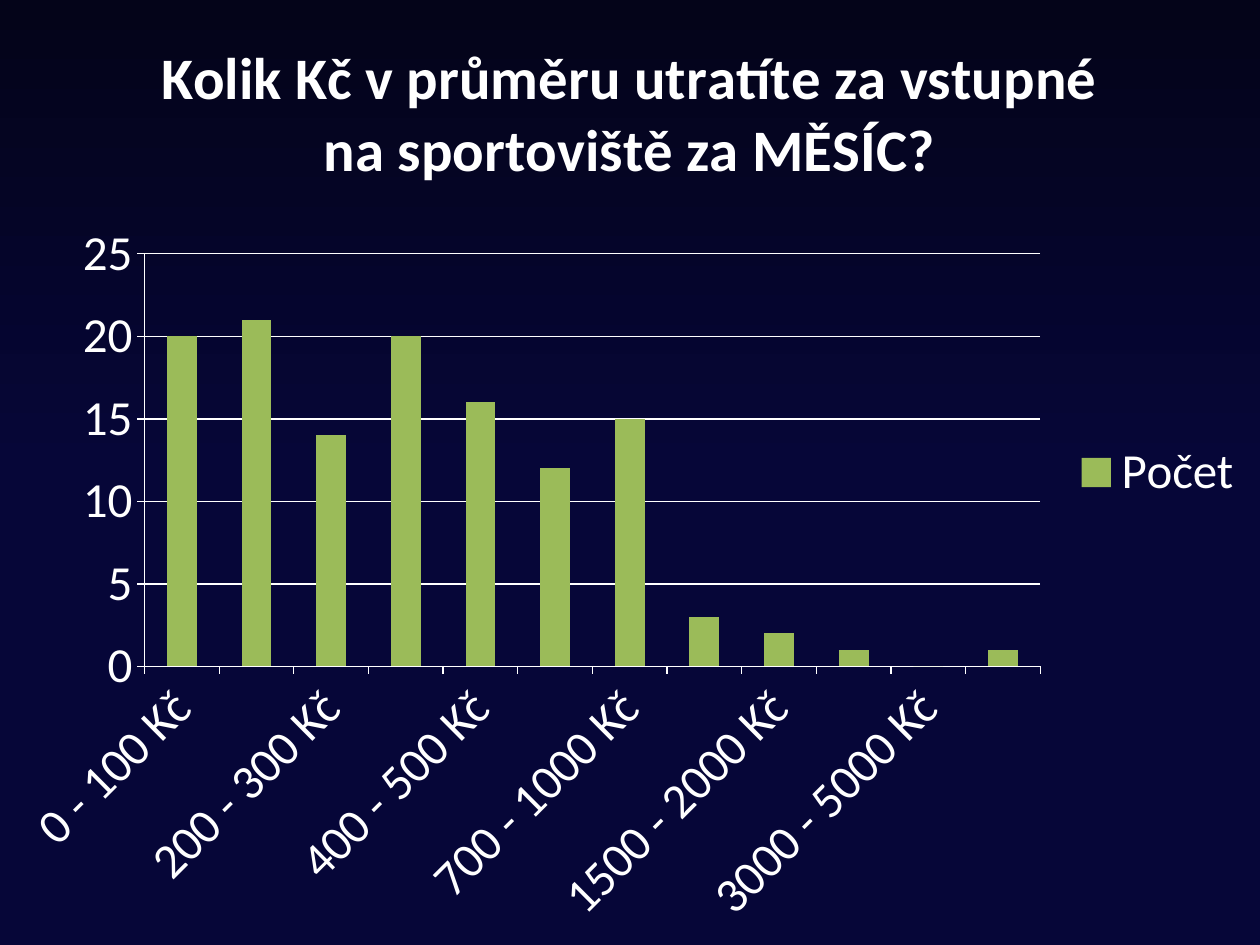
from pptx import Presentation
from pptx.chart.data import CategoryChartData
from pptx.dml.color import RGBColor
from pptx.enum.chart import XL_CHART_TYPE, XL_LEGEND_POSITION, XL_TICK_MARK
from pptx.util import Inches, Pt

COLORS = {"top": "040419", "base": "060638", "text": "FFFFFF", "bars": "9BBB59"}
QUESTION = "Kolik Kč v průměru utratíte za vstupné na sportoviště za MĚSÍC?"
LIMITS = [0, 100, 200, 300, 400, 500, 700, 1000, 1500, 2000, 3000, 5000]
ANSWERS = [20, 21, 14, 20, 16, 12, 15, 3, 2, 1, 0, 1]


def color(name):
    """Return a palette colour."""
    return RGBColor.from_string(COLORS[name])


def style_font(font, size=28, bold=False):
    """Apply the slide's typeface and text colour."""
    font.name = "Calibri"
    font.size = Pt(size)
    font.bold = bold
    font.color.rgb = color("text")


def write_text(frame, text, **style):
    """Write one formatted paragraph into a text frame."""
    paragraph = frame.paragraphs[0]
    run = paragraph.add_run()
    run.text = text
    style_font(paragraph.font, **style)
    style_font(run.font, **style)


def paint_background(slide):
    """Darken the background towards the top."""
    fill = slide.background.fill
    fill.gradient()
    fill.gradient_angle = 270
    for stop, name, position in zip(fill.gradient_stops, ("top", "base"), (0, 0.5)):
        stop.color.rgb = color(name)
        stop.position = position


def style_line(line):
    """Draw a thin line in the text colour."""
    line.color.rgb = color("text")
    line.width = Pt(0.75)


def style_axis(axis):
    """Format the line, ticks and labels of an axis."""
    style_line(axis.format.line)
    style_font(axis.tick_labels.font)
    axis.major_tick_mark = XL_TICK_MARK.OUTSIDE
    axis.minor_tick_mark = XL_TICK_MARK.NONE


def add_spending_chart(slide, width, height):
    """Add the column chart of monthly spending over the whole slide."""
    spending = CategoryChartData()
    ranges = [f"{low} - {high} Kč" for low, high in zip(LIMITS, LIMITS[1:])]
    spending.categories = ranges + ["Other"]
    spending.add_series("Počet", ANSWERS)
    chart = slide.shapes.add_chart(
        XL_CHART_TYPE.COLUMN_CLUSTERED, 0, 0, width, height, spending
    ).chart
    style_font(chart.font)

    write_text(chart.chart_title.text_frame, QUESTION, size=33.6, bold=True)
    chart.chart_title.include_in_layout = False

    chart.has_legend = True
    chart.legend.position = XL_LEGEND_POSITION.RIGHT
    chart.legend.include_in_layout = False
    style_font(chart.legend.font)

    style_axis(chart.category_axis)
    style_axis(chart.value_axis)
    chart.value_axis.maximum_scale = 25
    chart.value_axis.major_unit = 5
    style_line(chart.value_axis.major_gridlines.format.line)
    for body in chart.category_axis._element.xpath("c:txPr/a:bodyPr"):
        body.set("rot", str(-45 * 60000))

    columns = chart.plots[0]
    columns.vary_by_categories = False
    columns.gap_width = 150
    bars = columns.series[0].format.fill
    bars.solid()
    bars.fore_color.rgb = color("bars")


def main():
    """Build and save the slide."""
    deck = Presentation()
    deck.slide_width, deck.slide_height = Inches(10), Inches(7.5)
    slide = deck.slides.add_slide(deck.slide_layouts[6])
    paint_background(slide)
    add_spending_chart(slide, deck.slide_width, deck.slide_height)
    deck.save("out.pptx")


if __name__ == "__main__":
    main()
